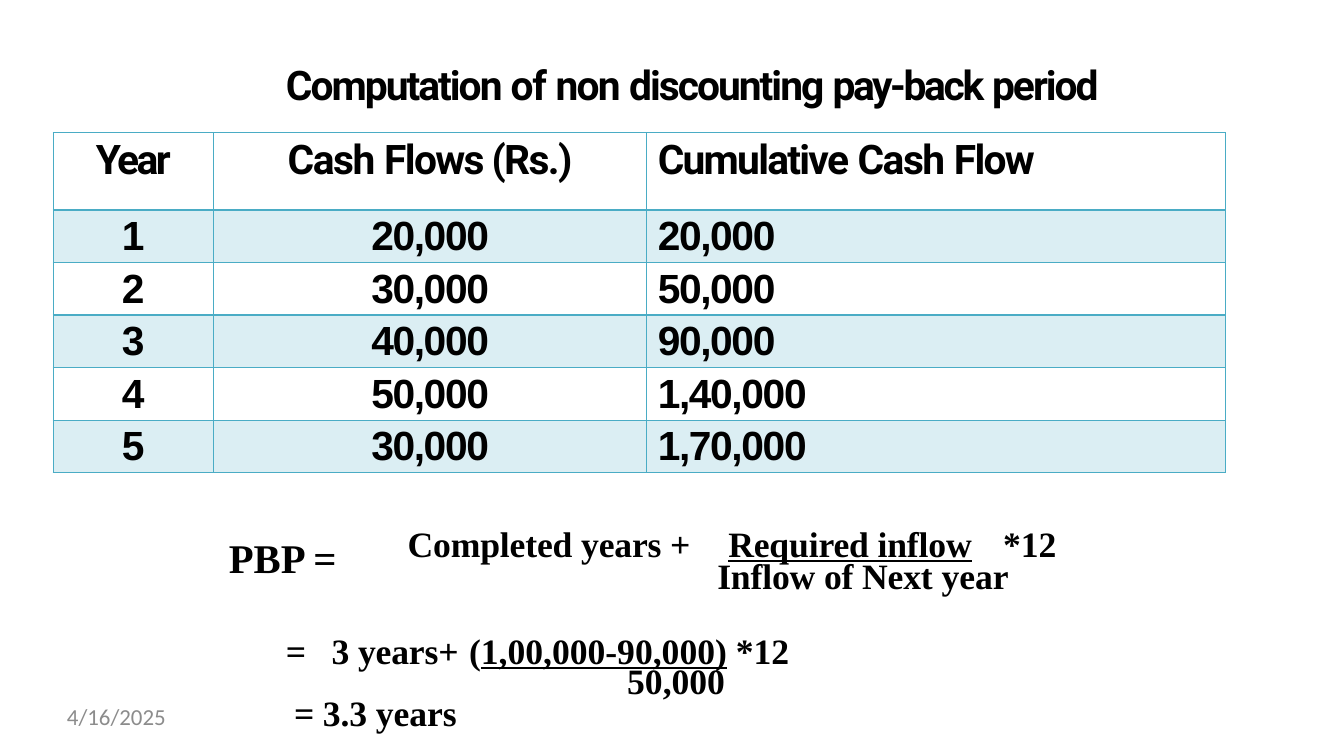
"""Builds a slide that computes the non-discounting pay-back period."""
from lxml.etree import SubElement
from pptx import Presentation
from pptx.dml.color import RGBColor as RGB
from pptx.enum.text import MSO_AUTO_SIZE as AUTO, PP_ALIGN as AL
from pptx.oxml import parse_xml
from pptx.oxml.ns import nsdecls, qn
from pptx.util import Inches, Pt

W, H = 14.67, 8.25
COLORS = {"text": "000000", "date": "8C8C8C", "line": "4AACC5", "band": "DBEEF3"}
COLS = (11.93, 32.24, 43.08)
HEAD_ROW, BODY_ROW = 10.18, 6.55
HEADS = (
    [("Year", -2)],
    [("Cash ", -1.2), ("Flows (Rs.)", -1.3)],
    [("Cumulative ", -1.4), ("Cash ", -1.2), ("Flow", -1.4)],
)
FLOWS = (
    ("20,000", "20,000"),
    ("30,000", "50,000"),
    ("40,000", "90,000"),
    ("50,000", "1,40,000"),
    ("30,000", "1,70,000"),
)


def col(n):
    return Inches(W * n / 100)


def row(n):
    return Inches(H * n / 100)


def add_runs(p, runs, font, size, color="text", bold=True):
    for text, spc, *underline in runs:
        r = p.add_run()
        r.text = text
        f = r.font
        f.name, f.size, f.bold = font, Pt(size), bold
        f.underline = bool(underline)
        f.color.rgb = RGB.from_string(COLORS[color])
        r._r.get_or_add_rPr().set("spc", str(round(spc * 100)))


def format_para(p, align=AL.LEFT, left=0, before=0, line=None, tabs=()):
    p.alignment = align
    p.space_before = Pt(before)
    if line:
        p.line_spacing = Pt(line)
    pPr = p._p.get_or_add_pPr()
    pPr.set("marL", str(col(left)))
    pPr.set("indent", "0")
    if tabs:
        tab_list = SubElement(pPr, qn("a:tabLst"))
        for pos in tabs:
            SubElement(tab_list, qn("a:tab"), pos=str(col(pos)), algn="l")


def add_text(s, x, y, w, h, paras, font, size, top=0.01, **style):
    tf = s.shapes.add_textbox(col(x), row(y), col(w), row(h)).text_frame
    tf.word_wrap = True
    tf.auto_size = AUTO.SHAPE_TO_FIT_TEXT
    tf.margin_left = tf.margin_right = tf.margin_bottom = 0
    tf.margin_top = Inches(top)
    for i, (runs, layout) in enumerate(paras):
        p = tf.add_paragraph() if i else tf.paragraphs[0]
        format_para(p, **layout)
        add_runs(p, runs, font, size, **style)


def add_borders(cell, top, bottom):
    tcPr = cell._tc.get_or_add_tcPr()
    for i, (side, width) in enumerate(zip("LRTB", (1, 1, top, bottom))):
        tcPr.insert(i, parse_xml(
            f'<a:ln{side} {nsdecls("a")} w="{Pt(width)}"><a:solidFill>'
            f'<a:srgbClr val="{COLORS["line"]}"/></a:solidFill></a:ln{side}>'))


def fill_cell(cell, runs, r, c):
    cell.margin_left = cell.margin_right = cell.margin_bottom = 0
    cell.margin_top = Inches(0.04)
    if r % 2:
        cell.fill.solid()
        cell.fill.fore_color.rgb = RGB.from_string(COLORS["band"])
    else:
        cell.fill.background()
    add_borders(cell, 2.25 if r == 1 else 1, 2.25 if r == 0 else 1)
    p = cell.text_frame.paragraphs[0]
    if c == 2:
        format_para(p, left=0.82, before=2.6)
    else:
        format_para(p, AL.CENTER, before=2.6)
    add_runs(p, runs, "Arial" if r else "Roboto", 32)


def add_cash_table(s):
    body = [([(str(year), 0)], [(flow, -1.1)], [(total, -1.1)])
            for year, (flow, total) in enumerate(FLOWS, 1)]
    rows = [HEADS, *body]
    heights = [HEAD_ROW] + [BODY_ROW] * len(body)
    table = s.shapes.add_table(len(rows), len(COLS), col(3.95), row(17.58),
                               col(sum(COLS)), row(sum(heights))).table
    table.first_row = table.horz_banding = False
    for c, width in enumerate(COLS):
        table.columns[c].width = col(width)
    for r, (height, cells) in enumerate(zip(heights, rows)):
        table.rows[r].height = row(height)
        for c, runs in enumerate(cells):
            fill_cell(table.cell(r, c), runs, r, c)


def add_formula(s):
    serif = "Times New Roman"
    add_text(s, 17.04, 70.3, 19.15, 6.67,
             [([("PBP =", -0.1)], dict(before=0.9))], serif, 32)
    add_text(s, 30.33, 70.3, 58.9, 8.73, [
        ([("Completed years +\t", -0.1), ("Required inflow", -0.1, True),
          ("\t", 0, True), ("*12", 0)],
         dict(before=0.9, line=25.1, tabs=(22.56, 44.99))),
        ([("Inflow of Next ", -0.1), ("year", 0)], dict(left=23.04, line=25.1)),
    ], serif, 28)
    add_text(s, 21.27, 84.48, 55.42, 12.73, [
        ([("=\t3 years+\t", -0.1), ("(", 0), ("1,00,000-90,000)", 0, True),
          (" ", -0.8), ("*12", 0)],
         dict(before=0.9, line=25.1, tabs=(2.32, 21.13))),
        ([("50,000", 0)], dict(align=AL.CENTER, left=2.66, line=23.8)),
        ([("= 3.3 ", -0.1), ("years", 0)], dict(left=0.61, line=25.1)),
    ], serif, 28)


def main():
    prs = Presentation()
    prs.slide_width, prs.slide_height = Inches(W), Inches(H)
    s = prs.slides.add_slide(prs.slide_layouts[6])
    title = [("Computation ", -1.6), ("of ", -1.2), ("non ", -1.4),
             ("discounting ", -1.6), ("pay-back ", -1.9), ("period", -1.6)]
    add_text(s, 21.27, 7.76, 69.87, 6.67, [(title, dict(before=1))], "Roboto", 32)
    add_cash_table(s)
    add_formula(s)
    add_text(s, 4.98, 92.97, 22.97, 3.64, [([("4/16/2025", 0)], {})],
             "Calibri", 18, top=0, color="date", bold=False)
    prs.save("out.pptx")


if __name__ == "__main__":
    main()
